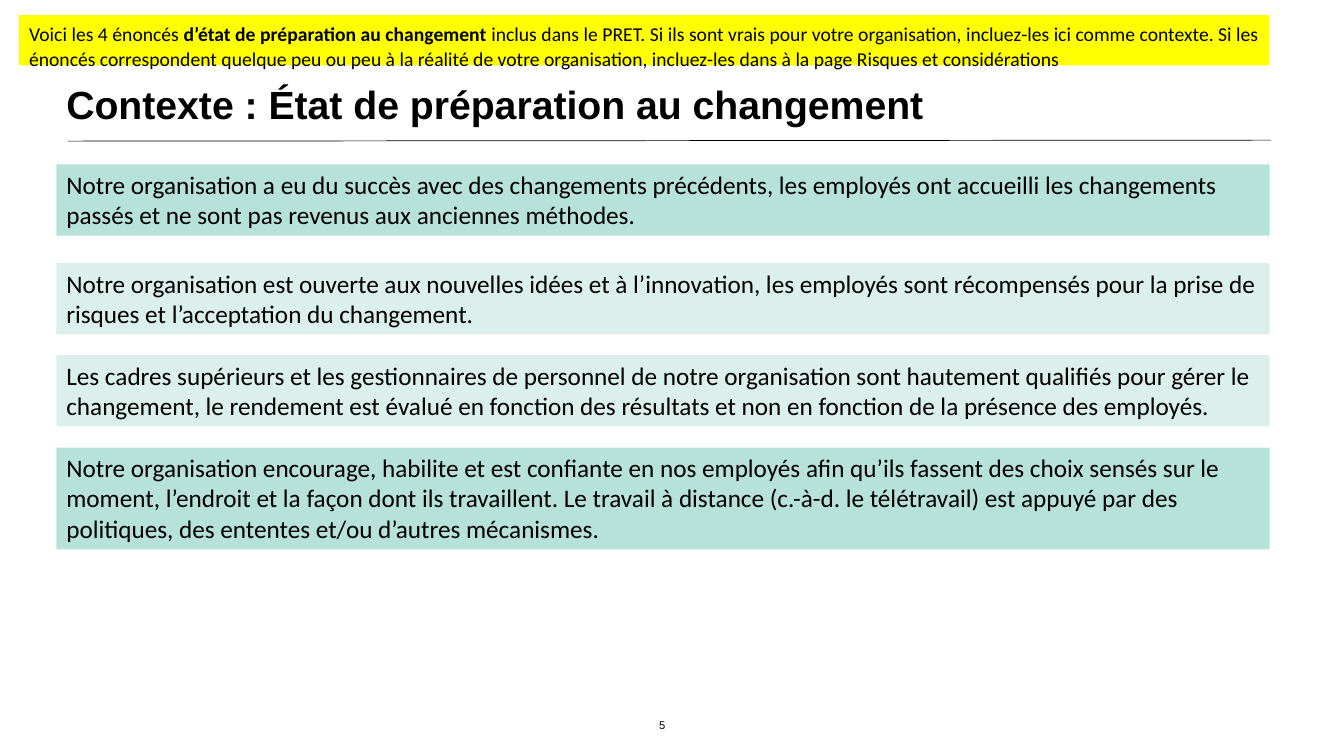
from lxml import etree
from pptx import Presentation
from pptx.dml.color import RGBColor
from pptx.enum import shapes, text
from pptx.oxml import ns
from pptx.util import Pt

BLACK = RGBColor(0x00, 0x00, 0x00)
YELLOW = RGBColor(0xFF, 0xFF, 0x00)
MINT = RGBColor(0xB7, 0xE2, 0xD9)
PALE_MINT = RGBColor(0xDB, 0xF0, 0xEC)

LEFT, WIDTH = 40.3, 866.7

NOTE = [
    ("Voici les 4 énoncés ", False),
    ("d’état de préparation au changement ", True),
    ("inclus dans le PRET. Si ils sont vrais pour votre organisation, "
     "incluez-les ici comme contexte. Si les énoncés correspondent quelque peu "
     "ou peu à la réalité de votre organisation, incluez-les dans à la page "
     "Risques et considérations ", False),
]

STATEMENTS = [
    (117.4, 51, MINT,
     "Notre organisation a eu du succès avec des changements précédents, les "
     "employés ont accueilli les changements passés et ne sont pas revenus aux "
     "anciennes méthodes."),
    (187.9, 51, PALE_MINT,
     "Notre organisation est ouverte aux nouvelles idées et à l’innovation, les "
     "employés sont récompensés pour la prise de risques et l’acceptation du "
     "changement."),
    (253.6, 51, PALE_MINT,
     "Les cadres supérieurs et les gestionnaires de personnel de notre "
     "organisation sont hautement qualifiés pour gérer le changement, le "
     "rendement est évalué en fonction des résultats et non en fonction de la "
     "présence des employés."),
    (319.7, 72.7, MINT,
     "Notre organisation encourage, habilite et est confiante en nos employés "
     "afin qu’ils fassent des choix sensés sur le moment, l’endroit et la façon "
     "dont ils travaillent. Le travail à distance (c.-à-d. le télétravail) est "
     "appuyé par des politiques, des ententes et/ou d’autres mécanismes."),
]


class SlideBuilder:
    def __init__(self, slide, color=BLACK):
        self.slide = slide
        self.color = color

    def add_words(self, shape, runs, size, font, align, anchor, spacing):
        frame = shape.text_frame
        frame.word_wrap = True
        frame.auto_size = text.MSO_AUTO_SIZE.NONE
        frame.vertical_anchor = anchor
        paragraph = frame.paragraphs[0]
        paragraph.alignment = align
        paragraph.line_spacing = spacing
        for words, bold in runs:
            run = paragraph.add_run()
            run.text = words
            run.font.name = font
            run.font.size = Pt(size)
            run.font.bold = bold
            run.font.color.rgb = self.color

    def label(self, box, runs, size, align=text.PP_ALIGN.LEFT, spacing=1.0):
        shape = self.slide.shapes.add_textbox(*map(Pt, box))
        self.add_words(shape, runs, size, "Arial", align,
                       text.MSO_ANCHOR.MIDDLE, spacing)

    def panel(self, box, fill, runs, size, align=text.PP_ALIGN.LEFT, spacing=1.0):
        shape = self.slide.shapes.add_shape(
            shapes.MSO_SHAPE.RECTANGLE, *map(Pt, box))
        shape.shadow.inherit = False
        shape.fill.solid()
        shape.fill.fore_color.rgb = fill
        shape.line.fill.background()
        self.add_words(shape, runs, size, "Calibri", align,
                       text.MSO_ANCHOR.TOP, spacing)

    def rule(self, ends, width):
        line = self.slide.shapes.add_connector(
            shapes.MSO_CONNECTOR.STRAIGHT, *map(Pt, ends))
        line.line.color.rgb = self.color
        line.line.width = Pt(width)
        etree.SubElement(line._element.spPr, ns.qn("a:effectLst"))


def main():
    deck = Presentation()
    deck.slide_width, deck.slide_height = Pt(960), Pt(540)
    builder = SlideBuilder(deck.slides.add_slide(deck.slide_layouts[6]))

    builder.rule((48.3, 100.8, 908, 100.1), 0.5)
    builder.label((458.6, 508.3, 28.8, 19.4), [("5", False)], 8,
                  text.PP_ALIGN.CENTER)
    builder.panel((13.7, 10.8, 893, 36), YELLOW, NOTE, 14,
                  text.PP_ALIGN.JUSTIFY, 1.07)
    builder.label((LEFT, 43.2, WIDTH, 65.5),
                  [("Contexte : État de préparation au changement", True)],
                  28, spacing=0.9)
    for top, height, fill, statement in STATEMENTS:
        builder.panel((LEFT, top, WIDTH, height), fill, [(statement, False)], 18)

    deck.save("out.pptx")


if __name__ == "__main__":
    main()
